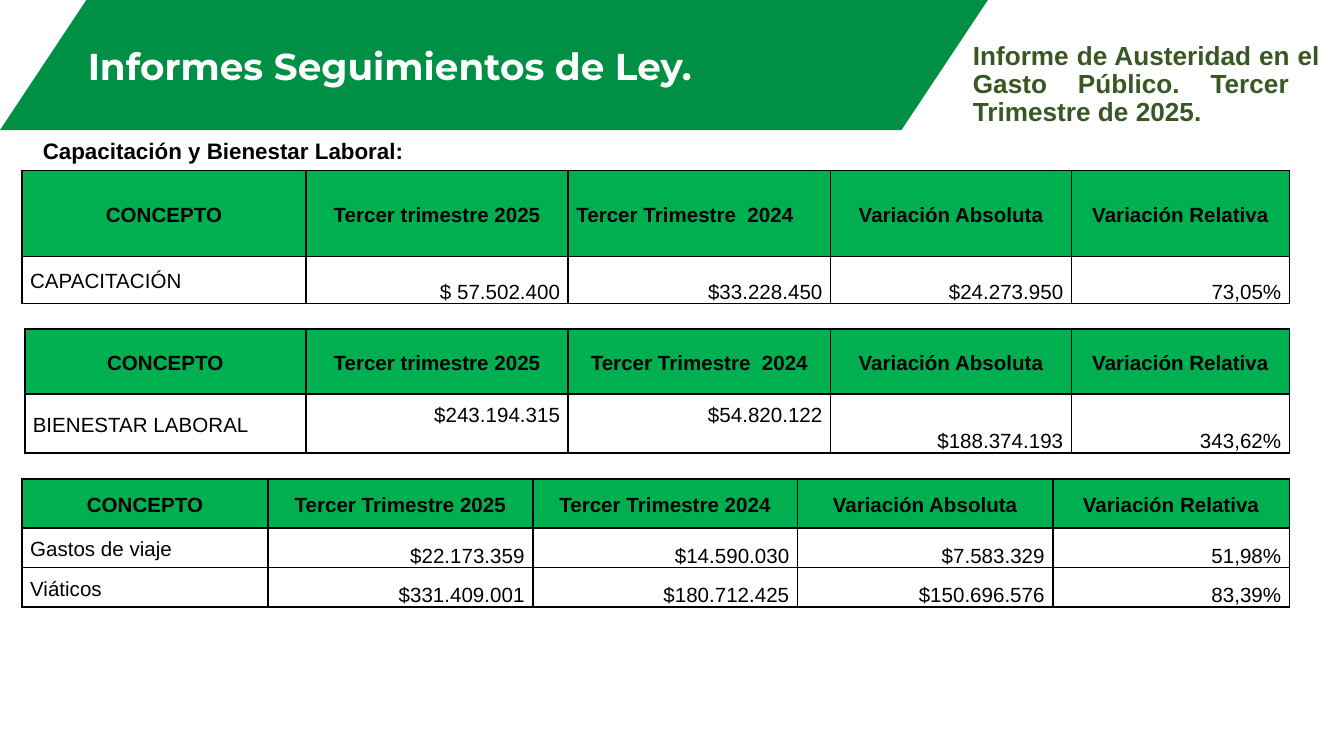
import pptx
import pptx.dml.color
import pptx.enum.shapes
import pptx.enum.text
import pptx.oxml
import pptx.oxml.ns
import pptx.util

COLORS = {"banner": "009045", "header": "00B050", "report": "385723",
          "ink": "000000", "title": "FFFFFF"}
WIDTH = pptx.util.Inches(10)
HEIGHT = WIDTH * 9 // 16
ALIGN = pptx.enum.text.PP_ALIGN
ANCHOR = pptx.enum.text.MSO_ANCHOR
LINE_SHARE = 0.44

QUARTERS = ["Tercer trimestre 2025", "Tercer Trimestre  2024"]
TRAVEL_QUARTERS = ["Tercer Trimestre 2025", "Tercer Trimestre 2024"]
TRAINING = [["CAPACITACIÓN", "$ 57.502.400", "$33.228.450", "$24.273.950", "73,05%"]]
WELFARE = [["BIENESTAR LABORAL", "$243.194.315", "$54.820.122", "$188.374.193", "343,62%"]]
TRAVEL = [["Gastos de viaje", "$22.173.359", "$14.590.030", "$7.583.329", "51,98%"],
          ["Viáticos", "$331.409.001", "$180.712.425", "$150.696.576", "83,39%"]]


def rgb(name):
    """Return the palette colour called name."""
    return pptx.dml.color.RGBColor.from_string(COLORS[name])


def place(box):
    """Turn a box in percent of the slide into lengths."""
    left, top, width, height = box
    return (int(WIDTH * left / 100), int(HEIGHT * top / 100),
            int(WIDTH * width / 100), int(HEIGHT * height / 100))


def write(frame, text, size, color, align, spacing, bold=True, family="Arial"):
    """Write one formatted run in the first paragraph of a frame."""
    paragraph = frame.paragraphs[0]
    paragraph.alignment = align
    paragraph.line_spacing = spacing
    run = paragraph.add_run()
    run.text = text
    run.font.size = pptx.util.Pt(size)
    run.font.name = family
    run.font.bold = bold
    run.font.color.rgb = rgb(color)


def add_label(slide, box, text, size, color, align, spacing=1.0,
              anchor=ANCHOR.TOP, family="Arial"):
    """Place a wrapped text box."""
    frame = slide.shapes.add_textbox(*place(box)).text_frame
    frame.word_wrap = True
    frame.vertical_anchor = anchor
    write(frame, text, size, color, align, spacing, family=family)


def add_banner(slide, box):
    """Place the slanted green band and its title."""
    left, top, width, height = box
    band = slide.shapes.add_shape(
        pptx.enum.shapes.MSO_SHAPE.PARALLELOGRAM, *place(box))
    band.adjustments[0] = 0.664
    band.shadow.inherit = False
    band.fill.solid()
    band.fill.fore_color.rgb = rgb("banner")
    band.line.fill.background()
    title_box = (left, top + height * 0.28, width * 0.8, height * 0.45)
    add_label(slide, title_box, "Informes Seguimientos de Ley. ", 20, "title",
              ALIGN.CENTER, 0.9, ANCHOR.BOTTOM, "Montserrat")


def outline_cell(cell):
    """Draw a thin border on the four sides of a cell."""
    properties = cell._tc.get_or_add_tcPr()
    for position, side in enumerate(("lnL", "lnR", "lnT", "lnB")):
        properties.insert(position, pptx.oxml.parse_xml(
            f'<a:{side} {pptx.oxml.ns.nsdecls("a")} w="12700"><a:solidFill>'
            f'<a:srgbClr val="{COLORS["ink"]}"/></a:solidFill></a:{side}>'))


def fill_cell(cell, text, is_header, align, anchor):
    """Format one cell and write its text."""
    cell.margin_left = cell.margin_right = pptx.util.Inches(0.06)
    cell.margin_top = cell.margin_bottom = 0
    cell.vertical_anchor = anchor
    if is_header:
        cell.fill.solid()
        cell.fill.fore_color.rgb = rgb("header")
    else:
        cell.fill.background()
    outline_cell(cell)
    write(cell.text_frame, text, 11, "ink", align, 1.15, bold=is_header)


def add_comparison(slide, box, quarters, records, column_weights, row_weights):
    """Place a table comparing two quarters and return it."""
    left, top, width, height = place(box)
    headings = ["CONCEPTO", *quarters, "Variación Absoluta", "Variación Relativa"]
    rows = [headings, *records]
    table = slide.shapes.add_table(
        len(rows), len(headings), left, top, width, height).table
    table.first_row = table.horz_banding = False
    for column, weight in zip(table.columns, column_weights):
        column.width = int(width * weight / sum(column_weights))
    for row, weight in zip(table.rows, row_weights):
        row.height = int(height * weight / sum(row_weights))
    for row_index, values in enumerate(rows):
        for column_index, value in enumerate(values):
            is_header = row_index == 0
            is_amount = not is_header and column_index > 0
            align = (ALIGN.CENTER if is_header
                     else ALIGN.RIGHT if is_amount else ALIGN.LEFT)
            anchor = ANCHOR.BOTTOM if is_amount else ANCHOR.MIDDLE
            fill_cell(table.cell(row_index, column_index), value,
                      is_header, align, anchor)
    return table


def build_slide(slide):
    """Place every region of the austerity report."""
    add_banner(slide, (0, 0, 73.5, 17.2))
    add_label(slide, (71.4, 4.8, 27.8, 13.2),
              "Informe de Austeridad en el Gasto Público. Tercer  Trimestre de 2025.",
              14, "report", ALIGN.JUSTIFY, 0.9)
    add_label(slide, (2.2, 17.25, 30.1, 5.4), "Capacitación y Bienestar Laboral:",
              12, "ink", ALIGN.LEFT)
    training = add_comparison(slide, (1.64, 22.55, 94.3, 17.6), QUARTERS, TRAINING,
                              (2.11, 1.95, 1.95, 1.79, 1.62), (0.64, 0.35))
    training.cell(0, 2).text_frame.paragraphs[0].alignment = ALIGN.LEFT
    welfare = add_comparison(slide, (1.84, 43.55, 94.1, 16.4), QUARTERS, WELFARE,
                             (2.09, 1.95, 1.95, 1.79, 1.62), (0.48, 0.44))
    for quarter in (1, 2):
        welfare.cell(1, quarter).margin_bottom = int(welfare.rows[1].height * LINE_SHARE)
    add_comparison(slide, (1.64, 63.4, 94.3, 16.9), TRAVEL_QUARTERS, TRAVEL,
                   (1.83, 1.97, 1.97, 1.9, 1.76), (0.36, 0.29, 0.29))


def main():
    """Build and save the presentation."""
    presentation = pptx.Presentation()
    presentation.slide_width, presentation.slide_height = WIDTH, HEIGHT
    build_slide(presentation.slides.add_slide(presentation.slide_layouts[6]))
    presentation.save("out.pptx")


if __name__ == "__main__":
    main()
